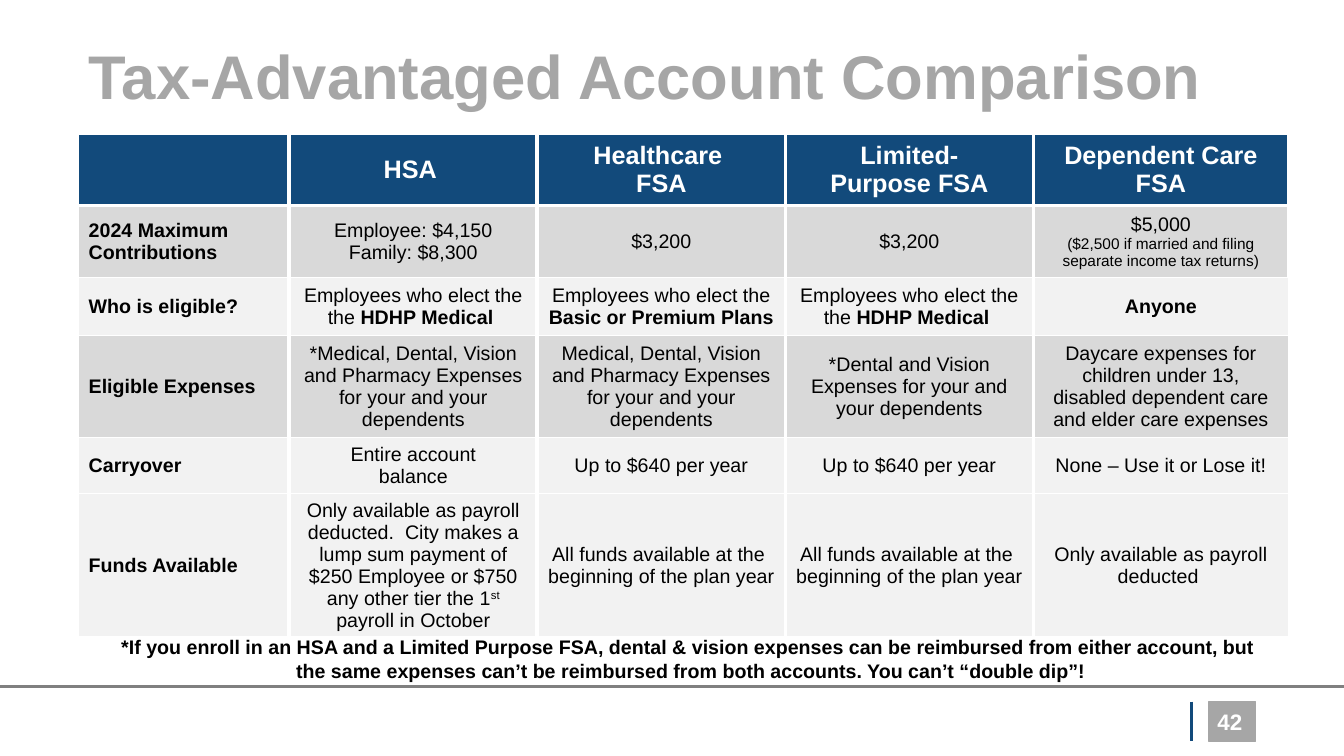
import pptx
import pptx.dml.color
import pptx.enum.shapes
import pptx.enum.text
import pptx.oxml
import pptx.oxml.ns
import pptx.util

PX = 9144  # 100 px to the inch
FONT = "Arial"
NAVY, GREY, RULE_GREY = "124A7B", "A6A6A6", "808080"
DARK_BAND, LIGHT_BAND = "D9D9D9", "F2F2F2"
WHITE, BLACK = "FFFFFF", "000000"
ALIGN = pptx.enum.text.PP_ALIGN
MIDDLE = pptx.enum.text.MSO_ANCHOR.MIDDLE

COLUMN_WIDTHS = [209, 246, 246, 246, 253]
ROW_HEIGHTS = [71, 71, 58, 101, 56, 135]
ROW_FILLS = [NAVY, DARK_BAND, LIGHT_BAND, DARK_BAND, LIGHT_BAND, LIGHT_BAND]
CELL_MARGIN = 1  # above and below the text, so the tallest row ends at the footnote

# A cell is a list of paragraphs; a paragraph is text or a list of (text, style) runs.
HDHP_ONLY = ["Employees who elect the", [("the ", ""), ("HDHP Medical ", "bold")]]
FULL_EXPENSES = "Medical, Dental, Vision and Pharmacy Expenses for your and your dependents"
ALL_FUNDS = ["All funds available at the ", "beginning of the plan year "]
SMALL_PRINT = "($2,500 if married and filing separate income tax returns)"
ROWS = [
    [[], ["HSA "], ["Healthcare \nFSA"], ["Limited-\nPurpose FSA"],
     ["Dependent Care", "FSA"]],
    [["2024 Maximum Contributions"], ["Employee: $4,150", "Family: $8,300"],
     ["$3,200"], ["$3,200"], ["$5,000", SMALL_PRINT]],
    [["Who is eligible?"], HDHP_ONLY,
     [[("Employees who elect the ", ""), ("Basic or Premium Plans ", "bold")]],
     HDHP_ONLY, [[("Anyone", "bold")]]],
    [["Eligible Expenses"], ["*" + FULL_EXPENSES], [FULL_EXPENSES],
     ["*Dental and Vision Expenses for your and your dependents"],
     ["Daycare expenses for children under 13, disabled dependent care "
      "and elder care expenses"]],
    [["Carryover"], ["Entire account", "balance"], ["Up to $640 per year"],
     ["Up to $640 per year"], ["None – Use it or Lose it!"]],
    [["Funds Available"],
     [[("Only available as payroll deducted.  City makes a lump sum payment of "
        "$250 Employee or $750 any other tier the 1", ""),
       ("st", "superscript"), (" payroll in October", "")]],
     ALL_FUNDS, ALL_FUNDS, ["Only available as payroll deducted "]],
]


def px(value):
    return pptx.util.Emu(value * PX)


def box(*lengths):
    return [px(length) for length in lengths]


def color(value):
    return pptx.dml.color.RGBColor.from_string(value)


def format_paragraph(paragraph, size, text_color, bold, alignment):
    paragraph.alignment = alignment
    font = paragraph.font
    font.name = FONT
    font.size = pptx.util.Pt(size)
    font.bold = bold
    font.color.rgb = color(text_color)


def add_rule(slide, start, end, line_color, width):
    line = slide.shapes.add_connector(
        pptx.enum.shapes.MSO_CONNECTOR.STRAIGHT, *box(*start, *end))
    line.line.color.rgb = color(line_color)
    line.line.width = pptx.util.Pt(width)
    properties = line._element.spPr
    properties.append(properties.makeelement(pptx.oxml.ns.qn("a:effectLst"), {}))


def add_text(slide, bounds, text, size, text_color, alignment, anchor):
    frame = slide.shapes.add_textbox(*box(*bounds)).text_frame
    frame.word_wrap = True
    frame.vertical_anchor = anchor
    frame.paragraphs[0].text = text
    format_paragraph(frame.paragraphs[0], size, text_color, True, alignment)


def set_title(slide, text):
    title = slide.shapes.title
    title.left, title.top, title.width, title.height = box(78, 6, 1150, 145)
    frame = title.text_frame
    frame.text = text
    frame.word_wrap = True
    frame.auto_size = pptx.enum.text.MSO_AUTO_SIZE.NONE
    frame.vertical_anchor = MIDDLE
    frame.paragraphs[0].line_spacing = 0.9
    format_paragraph(frame.paragraphs[0], 44, GREY, True, ALIGN.LEFT)


def add_page_badge(slide, number):
    badge = slide.shapes.add_shape(
        pptx.enum.shapes.MSO_SHAPE.RECTANGLE, *box(1199, 696, 46, 40))
    badge.shadow.inherit = False
    badge.fill.solid()
    badge.fill.fore_color.rgb = color(GREY)
    badge.line.color.rgb = color(GREY)
    badge.line.width = pptx.util.Pt(1)
    add_rule(slide, (1182, 696), (1182, 735), NAVY, 2)
    add_text(slide, (942, 696, 300, 40), number, 16, WHITE, ALIGN.RIGHT, MIDDLE)


def set_borders(cell, row, column):
    outer_right = column == len(COLUMN_WIDTHS) - 1 and row > 1
    widths = {
        "lnL": 1 if column == 0 else 3,
        "lnR": 1 if outer_right else 3,
        "lnT": 3 if row == 1 else 1,
        "lnB": 3 if row == 0 else 1,
    }
    properties = cell._tc.get_or_add_tcPr()
    for index, (side, width) in enumerate(widths.items()):
        properties.insert(index, pptx.oxml.parse_xml(
            f'<a:{side} {pptx.oxml.ns.nsdecls("a")} w="{pptx.util.Pt(width)}">'
            f'<a:solidFill><a:srgbClr val="{WHITE}"/></a:solidFill></a:{side}>'))


def write_runs(paragraph, content):
    if isinstance(content, str):
        paragraph.text = content
        return
    for text, style in content:
        run = paragraph.add_run()
        run.text = text
        if style == "bold":
            run.font.bold = True
        elif style == "superscript":
            run._r.get_or_add_rPr().set("baseline", "30000")


def fill_cell(cell, paragraphs, row, column):
    cell.fill.solid()
    cell.fill.fore_color.rgb = color(ROW_FILLS[row])
    cell.vertical_anchor = MIDDLE
    cell.margin_top = cell.margin_bottom = px(CELL_MARGIN)
    set_borders(cell, row, column)
    header = row == 0
    for index, content in enumerate(paragraphs):
        frame = cell.text_frame
        paragraph = frame.paragraphs[0] if index == 0 else frame.add_paragraph()
        write_runs(paragraph, content)
        size = 18 if header else 11 if content == SMALL_PRINT else 14
        format_paragraph(paragraph, size, WHITE if header else BLACK,
                         header or column == 0,
                         ALIGN.LEFT if column == 0 else ALIGN.CENTER)


def add_comparison_table(slide):
    table = slide.shapes.add_table(
        len(ROW_HEIGHTS), len(COLUMN_WIDTHS),
        *box(78, 133, sum(COLUMN_WIDTHS), sum(ROW_HEIGHTS))).table
    table.horz_banding = False
    for column, width in enumerate(COLUMN_WIDTHS):
        table.columns[column].width = px(width)
    for row, height in enumerate(ROW_HEIGHTS):
        table.rows[row].height = px(height)
        for column, paragraphs in enumerate(ROWS[row]):
            fill_cell(table.cell(row, column), paragraphs, row, column)


def main():
    presentation = pptx.Presentation()
    presentation.slide_width, presentation.slide_height = box(1333, 750)
    slide = presentation.slides.add_slide(presentation.slide_layouts[5])

    # Footer
    add_page_badge(slide, "42")
    add_rule(slide, (0, 681), (1333, 681), RULE_GREY, 2.25)

    # Title and comparison
    set_title(slide, "Tax-Advantaged Account Comparison")
    add_comparison_table(slide)

    # Footnote
    add_text(slide, (78, 625, 1215, 57),
             "*If you enroll in an HSA and a Limited Purpose FSA, dental & vision "
             "expenses can be reimbursed from either account, but \n"
             "the same expenses can’t be reimbursed from both accounts. "
             "You can’t “double dip”!",
             14, BLACK, ALIGN.CENTER, pptx.enum.text.MSO_ANCHOR.TOP)

    presentation.save("out.pptx")


if __name__ == "__main__":
    main()
